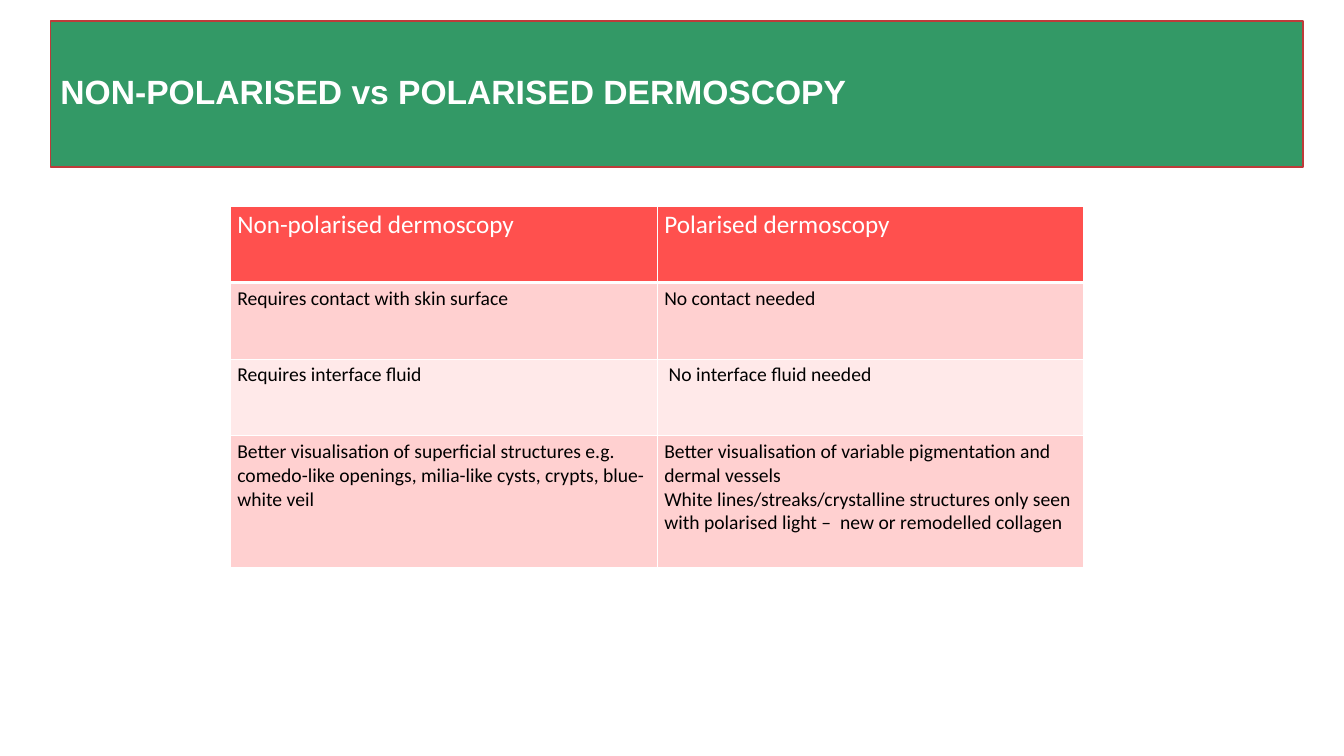
"""Build a slide that compares non-polarised and polarised dermoscopy."""
from dataclasses import dataclass

from lxml import etree
from pptx import Presentation
from pptx import util as u
from pptx.dml.color import RGBColor
from pptx.enum import text
from pptx.oxml import ns

HUES = {
    "green": "339966", "edge": "BD3B3A", "red": "FF504E", "rose": "FFD0D0",
    "pale": "FFE9E9", "white": "FFFFFF", "black": "000000",
}


@dataclass
class Row:
    """One table row: its cell texts, height in cm and look."""
    cells: tuple[str, str]
    high: float
    fill: str
    size: int = 14
    ink: str = "black"
    base: int = 1


ROWS = [
    Row(("Non-polarised dermoscopy", "Polarised dermoscopy"),
        1.93, "red", size=18, ink="white", base=3),
    Row(("Requires contact with skin surface", "No contact needed"), 1.93, "rose"),
    Row(("Requires interface fluid", " No interface fluid needed"), 1.93, "pale"),
    Row(("Better visualisation of superficial structures e.g. comedo-like openings, "
         "milia-like cysts, crypts, blue-white veil",
         "Better visualisation of variable pigmentation and dermal vessels\n"
         "White lines/streaks/crystalline structures only seen with polarised light "
         "–  new or remodelled collagen"), 3.33, "rose"),
]


def tint(name: str) -> RGBColor:
    """Return the named colour."""
    return RGBColor.from_string(HUES[name])


def write(frame, words: str, *, size: int, face: str, ink: str,
          bold: bool = False, lead: float = 1.0) -> None:
    """Fill a text frame with left-aligned, formatted paragraphs."""
    frame.text = words
    frame.word_wrap = True
    for para in frame.paragraphs:
        para.alignment = text.PP_ALIGN.LEFT
        para.line_spacing = lead
        font = para.runs[0].font
        font.size, font.name, font.bold = u.Pt(size), face, bold
        font.color.rgb = tint(ink)


def rule(cell, side: str, width: int) -> None:
    """Add a white border to one side of a cell."""
    props = cell._tc.get_or_add_tcPr()
    line = etree.SubElement(props, ns.qn(f"a:ln{side}"), w=str(u.Pt(width)))
    fill = etree.SubElement(line, ns.qn("a:solidFill"))
    etree.SubElement(fill, ns.qn("a:srgbClr"), val=HUES["white"])


def draw_head(slide) -> None:
    """Place and format the title band."""
    band = slide.shapes.title
    band.left, band.top = u.Cm(1.27), u.Cm(0.53)
    band.width, band.height = u.Cm(31.57), u.Cm(3.68)
    band.fill.solid()
    band.fill.fore_color.rgb = tint("green")
    band.line.color.rgb = tint("edge")
    band.line.width = u.Pt(1)
    frame = band.text_frame
    write(frame, "NON-POLARISED vs POLARISED DERMOSCOPY",
          size=24, face="Arial", ink="white", bold=True, lead=0.9)
    frame.auto_size = text.MSO_AUTO_SIZE.NONE
    frame.vertical_anchor = text.MSO_ANCHOR.MIDDLE


def draw_cell(cell, words: str, row: Row) -> None:
    """Write, border and fill one cell."""
    cell.margin_left = cell.margin_right = u.Cm(0.18)
    cell.margin_top = cell.margin_bottom = u.Cm(0.1)
    write(cell.text_frame, words, size=row.size, face="Calibri", ink=row.ink)
    for side, width in zip("LRTB", (1, 1, 1, row.base)):
        rule(cell, side, width)
    cell.fill.solid()
    cell.fill.fore_color.rgb = tint(row.fill)


def draw_grid(slide) -> None:
    """Add the comparison table."""
    high = sum(row.high for row in ROWS)
    grid = slide.shapes.add_table(len(ROWS), 2, u.Cm(5.8), u.Cm(5.19),
                                  u.Cm(21.52), u.Cm(high)).table
    for line, row in zip(grid.rows, ROWS):
        line.height = u.Cm(row.high)
        for cell, words in zip(line.cells, row.cells):
            draw_cell(cell, words, row)


def main() -> None:
    """Build and save the deck."""
    deck = Presentation()
    deck.slide_width, deck.slide_height = u.Cm(33.87), u.Cm(19.05)
    slide = deck.slides.add_slide(deck.slide_layouts[5])
    draw_head(slide)
    draw_grid(slide)
    deck.save("out.pptx")


if __name__ == "__main__":
    main()
